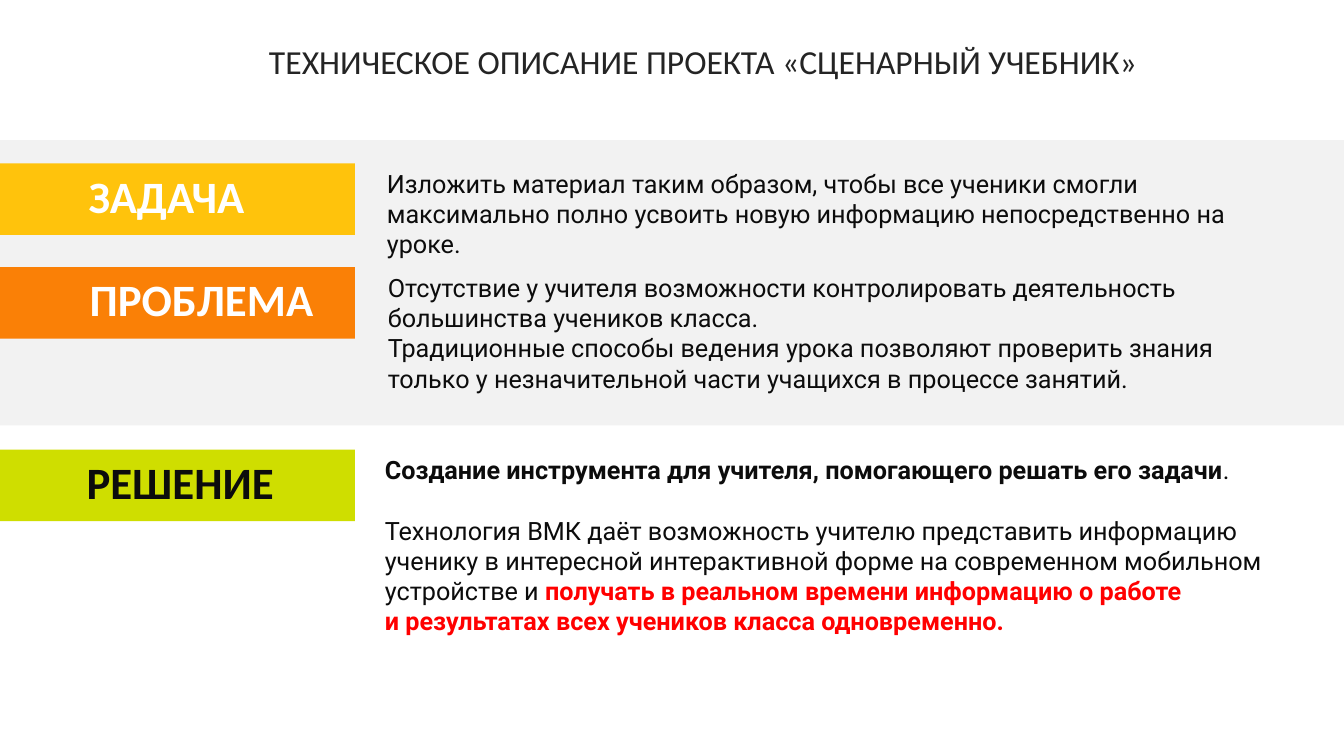
"""Builds the slide that describes the task, problem and solution of the project."""
from pptx import Presentation
from pptx.dml.color import RGBColor
from pptx.enum.shapes import MSO_SHAPE as Shape
from pptx.enum.text import MSO_ANCHOR as Anchor, PP_ALIGN as Align
from pptx.util import Inches, Pt

WHITE = RGBColor(0xFF, 0xFF, 0xFF)
BLACK = RGBColor(0x0C, 0x0C, 0x0C)
CHARCOAL = RGBColor(0x24, 0x24, 0x24)
GREY = RGBColor(0xF2, 0xF2, 0xF2)
YELLOW = RGBColor(0xFF, 0xC3, 0x0C)
ORANGE = RGBColor(0xFA, 0x80, 0x06)
LIME = RGBColor(0xCF, 0xDE, 0x00)
RED = RGBColor(0xFF, 0x00, 0x00)

TITLE = {"name": "Calibri", "size": Pt(24), "color": CHARCOAL}
LABEL = {"name": "Calibri", "size": Pt(32), "bold": True}
BODY = {"name": "Roboto", "size": Pt(18), "bold": False, "color": BLACK}
STRONG = {**BODY, "bold": True}
ALERT = {**STRONG, "color": RED}

COLUMNS, ROWS = 40, 30
TAG_WIDTH, TAG_HEIGHT = 10.56, 2.84


class SlideBuilder:
    """Holds the grid and the current slide."""

    def __init__(self, deck):
        """Adds a blank slide and measures its grid."""
        self.slide = deck.slides.add_slide(deck.slide_layouts[6])
        self.column = deck.slide_width / COLUMNS
        self.row = deck.slide_height / ROWS

    def place(self, left, top, width, height):
        """Turns grid units into lengths."""
        return (int(left * self.column), int(top * self.row),
                int(width * self.column), int(height * self.row))

    def bar(self, area, color):
        """Adds a plain filled rectangle."""
        bar = self.slide.shapes.add_shape(Shape.RECTANGLE, *self.place(*area))
        bar.shadow.inherit = False
        bar.fill.solid()
        bar.fill.fore_color.rgb = color
        bar.line.fill.background()

    def text(self, area, paragraphs, gap=0, margin=0, indent=0):
        """Adds a text box whose paragraphs are lists of (words, format) spans."""
        frame = self.slide.shapes.add_textbox(*self.place(*area)).text_frame
        frame.word_wrap = True
        frame.vertical_anchor = Anchor.TOP
        for number, spans in enumerate(paragraphs):
            para = frame.paragraphs[0] if number == 0 else frame.add_paragraph()
            para.alignment = Align.LEFT
            if number == 1 and gap:
                para.space_before = Pt(gap)
            if margin:
                properties = para._p.get_or_add_pPr()
                properties.set("marL", str(Inches(margin)))
                properties.set("indent", str(Inches(indent)))
            for words, style in spans:
                span = para.add_run()
                span.text = words
                for name, value in style.items():
                    if name == "color":
                        span.font.color.rgb = value
                    else:
                        setattr(span.font, name, value)

    def section(self, top, tag, body):
        """Adds a coloured tag with its label and the text beside it."""
        words, fill, color, left, width = tag
        self.bar((0, top, TAG_WIDTH, TAG_HEIGHT), fill)
        self.text((left, top, width, 2.56), [[(words, {**LABEL, "color": color})]],
                  margin=0.3, indent=0.19)
        left, width, height, gap, paragraphs = body
        self.text((left, top, width, height), paragraphs, gap)


SECTIONS = [
    (6.48, ("ЗАДАЧА", YELLOW, WHITE, 0.87, 7.26), (11.22, 27.69, 2.84, 0, [
        [("Изложить материал таким образом, чтобы все ученики смогли максимально "
          "полно усвоить новую информацию непосредственно на уроке.", BODY)],
    ])),
    (10.6, ("ПРОБЛЕМА", ORANGE, WHITE, 0.9, 9.87), (11.25, 25.74, 5.24, 0, [
        [("Отсутствие у учителя возможности контролировать деятельность "
          "большинства учеников класса.", BODY)],
        [("Традиционные способы ведения урока позволяют проверить знания", BODY)],
        [("только у незначительной части учащихся в процессе занятий.", BODY)],
    ])),
    (17.84, ("РЕШЕНИЕ", LIME, BLACK, 0.81, 9.87), (11.16, 27.03, 8.88, 21.5, [
        [("Создание инструмента для учителя, помогающего решать его задачи", STRONG),
         (".", BODY)],
        [("Технология ВМК даёт возможность учителю представить информацию ученику "
          "в интересной интерактивной форме на современном мобильном устройстве и ", BODY),
         ("получать в реальном времени информацию о работе", ALERT)],
        [("и результатах всех учеников класса одновременно.", ALERT)],
    ])),
]


def main():
    """Builds and saves the deck."""
    deck = Presentation()
    deck.slide_width, deck.slide_height = Inches(13.33), Inches(7.5)
    page = SlideBuilder(deck)
    page.bar((0, 5.56, COLUMNS, 11.32), GREY)
    page.text((7.71, 1.44, 27.87, 3.16),
              [[("ТЕХНИЧЕСКОЕ ОПИСАНИЕ ПРОЕКТА «СЦЕНАРНЫЙ УЧЕБНИК»", TITLE)]])
    for section in SECTIONS:
        page.section(*section)
    deck.save("out.pptx")


if __name__ == "__main__":
    main()
